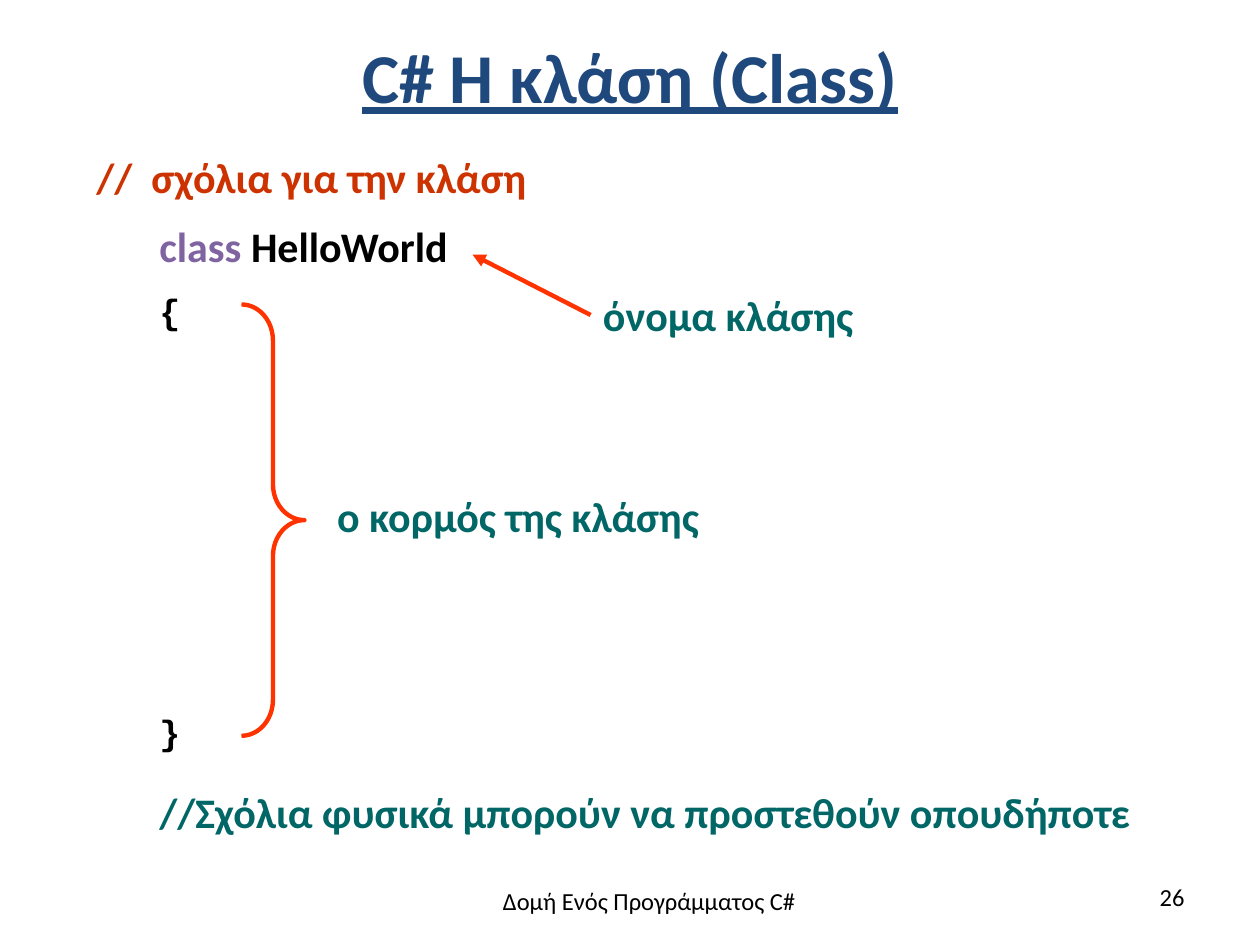
from pptx import Presentation
from pptx.dml.color import RGBColor
from pptx.enum.shapes import MSO_CONNECTOR, MSO_SHAPE
from pptx.enum.text import MSO_ANCHOR, PP_ALIGN
from pptx.oxml.ns import qn
from pptx.util import Pt
from lxml.etree import SubElement

COLORS = {
    "title": "1F497D",
    "text": "000000",
    "keyword": "8064A2",
    "comment": "CC3300",
    "note": "006666",
    "marker": "FF3300",
}
BODY_FONT = "Calibri"
CODE_FONT = "Courier New"


def color(name):
    return RGBColor.from_string(COLORS[name])


def format_paragraph(paragraph, size, color_name, bold=True, font_name=BODY_FONT):
    font = paragraph.font
    font.name, font.size, font.bold = font_name, Pt(size), bold
    font.color.rgb = color(color_name)


def add_label(slide, box, text, color_name="note", size=24, bold=True,
              font_name=BODY_FONT, align=PP_ALIGN.LEFT, wrap=False):
    label = slide.shapes.add_textbox(*map(Pt, box))
    label.text_frame.word_wrap = wrap
    paragraph = label.text_frame.paragraphs[0]
    paragraph.text = text
    paragraph.alignment = align
    format_paragraph(paragraph, size, color_name, bold, font_name)
    return label


def style_line(shape):
    shape.line.color.rgb = color("marker")
    shape.line.width = Pt(2.5)


def add_title(slide, box, text):
    title = slide.shapes.title
    title.left, title.top, title.width, title.height = map(Pt, box)
    title.text_frame.vertical_anchor = MSO_ANCHOR.MIDDLE
    paragraph = title.text_frame.paragraphs[0]
    paragraph.text = text
    paragraph.alignment = PP_ALIGN.CENTER
    format_paragraph(paragraph, 40, "title")
    paragraph.font.underline = True


def add_class_code(slide, box):
    """Class skeleton: comments, declaration and the two braces."""
    left, top, width, height = box
    indent = left + 36
    add_label(slide, (left, top, 262, 36), "//  σχόλια για την κλάση", "comment")

    declaration = add_label(slide, (indent, top + 39.6, 181.5, 36), "class ", "text")
    paragraph = declaration.text_frame.paragraphs[0]
    paragraph.runs[0].font.color.rgb = color("keyword")
    paragraph.add_run().text = "HelloWorld"

    for brace, offset in (("{", 79.2), ("}", 319.5)):
        add_label(slide, (indent, top + offset, 26.5, 31), brace, "text", 20,
                  font_name=CODE_FONT)
    add_label(slide, (indent, top + height - 36, width - 36, 36),
              "//Σχόλια φυσικά μπορούν να προστεθούν οπουδήποτε", wrap=True)


def add_callouts(slide, box):
    """Arrow to the class name and bracket around the class body."""
    left, top, width, height = box
    name_label = add_label(slide, (left + 199.5, top + 16.5, 158.5, 36), "όνομα κλάσης")
    arrow = slide.shapes.add_connector(
        MSO_CONNECTOR.STRAIGHT, Pt(left + 198), Pt(top + 36), Pt(left + 132), Pt(top))
    arrow.begin_connect(name_label, 1)
    style_line(arrow)
    SubElement(arrow.line._get_or_add_ln(), qn("a:tailEnd"), type="triangle")
    SubElement(arrow._element.spPr, qn("a:effectLst"))

    bracket = slide.shapes.add_shape(
        MSO_SHAPE.RIGHT_BRACE, Pt(left), Pt(top + 28.5), Pt(36), Pt(height - 28.5))
    bracket.adjustments[0] = 0.57
    bracket.adjustments[1] = 0.5
    bracket.shadow.inherit = False
    bracket.fill.background()
    style_line(bracket)
    add_label(slide, (left + 47.5, top + 131, 223, 36), "ο κορμός της κλάσης")


def add_footer(slide, box, text, number):
    left, top, width, height = box
    add_label(slide, (left, top + 2, 251, height - 2), text, "text", 14, False,
              align=PP_ALIGN.CENTER, wrap=True)
    add_label(slide, (left + width - 168, top, 168, 29), number, "text", 14, False,
              align=PP_ALIGN.RIGHT, wrap=True)


def main():
    presentation = Presentation()
    presentation.slide_width, presentation.slide_height = Pt(720), Pt(540)
    slide = presentation.slides.add_slide(presentation.slide_layouts[5])
    add_title(slide, (36, -8, 648, 102), "C# Η κλάση (Class)")
    add_class_code(slide, (48, 82.8, 612, 399))
    add_callouts(slide, (138, 145.5, 358, 275))
    add_footer(slide, (245.5, 500.5, 438.5, 41.5), "Δομή Ενός Προγράμματος C#", "26")
    presentation.save("out.pptx")


if __name__ == "__main__":
    main()
